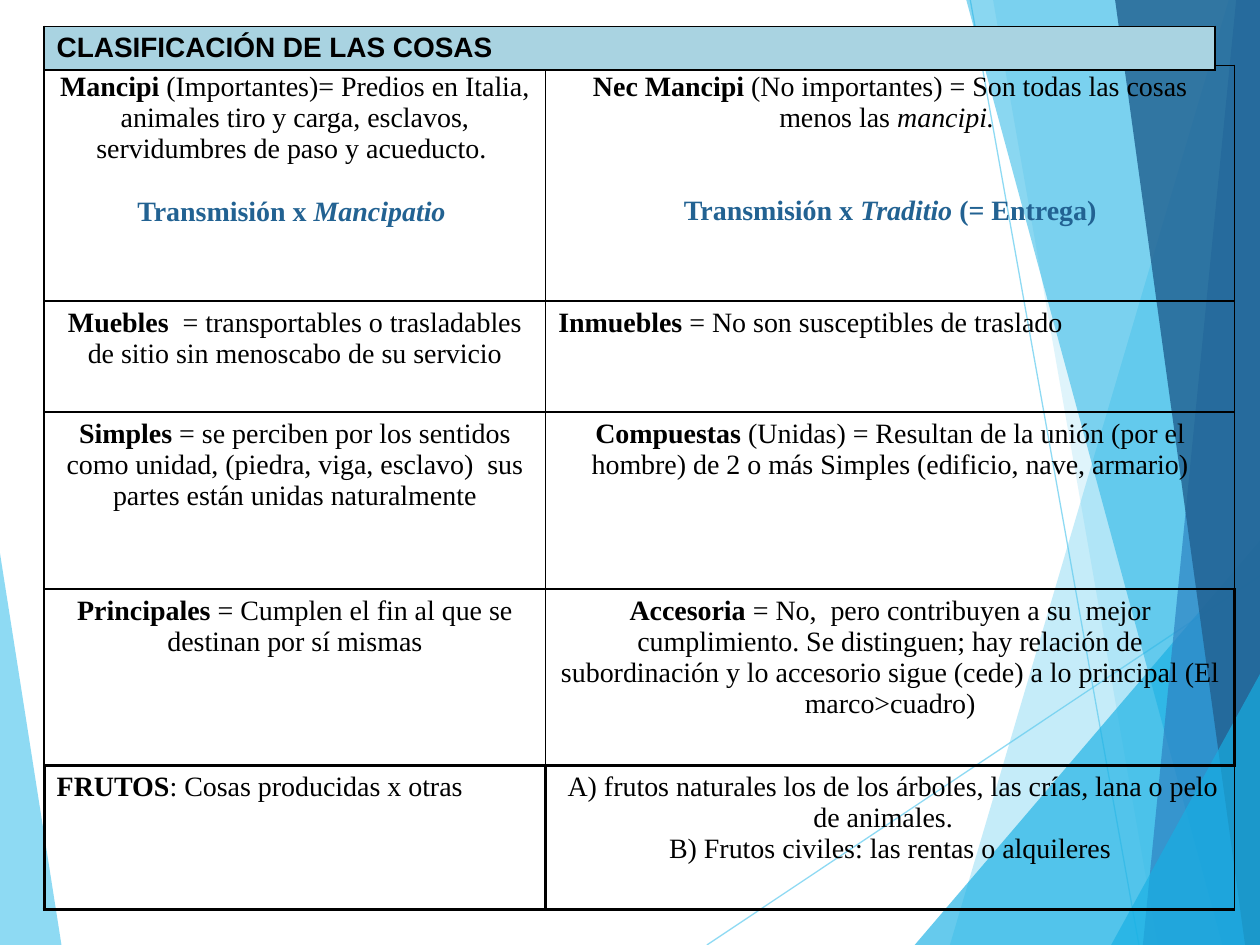
from dataclasses import dataclass

import lxml.etree
import pptx
import pptx.dml.color
import pptx.enum.shapes
import pptx.enum.text
import pptx.oxml.ns
import pptx.util

Cm = pptx.util.Cm
Pt = pptx.util.Pt
qn = pptx.oxml.ns.qn
Align = pptx.enum.text.PP_ALIGN

WIDE, HIGH = 25.4, 19.05
SKY, CYAN, BLUE, NAVY = "5FCBEF", "17B0E4", "2E83C3", "226292"
BLACK, PALE = "000000", "A9D3E1"
SERIF, SANS = "Times New Roman", "Arial"


@dataclass
class Wedge:
    top: tuple[float, float]
    foot: float
    side: float
    color: str
    alpha: int


@dataclass
class Line:
    start: tuple[float, float]
    end: tuple[float, float]


@dataclass
class Run:
    text: str
    bold: bool = False
    slant: bool = False


@dataclass
class Para:
    runs: list[Run]
    left: bool = False
    color: str = BLACK
    gap: float = 0
    face: str = SERIF


@dataclass
class Box:
    paras: list[Para]
    edges: tuple[int, int, int, int] = (1, 1, 1, 1)
    fill: str = ""


@dataclass
class Grid:
    left: float
    top: float
    cols: list[float]
    rows: list[float]
    boxes: list[list[Box]]


def term(name: str, rest: str, left: bool = False) -> Para:
    return Para([Run(name, True), Run(rest)], left)


def mode(word: str, tail: str, gap: float) -> Para:
    runs = [Run("Transmisión x ", True), Run(word, True, True)]
    if tail:
        runs.append(Run(tail, True))
    return Para(runs, color=NAVY, gap=gap)


WEDGES = [
    Wedge((0, 11.15), 1.24, 0, SKY, 70),
    Wedge((24.77, 0), 19.15, WIDE, SKY, 36),
    Wedge((20.02, 0), 23.34, WIDE, SKY, 20),
    Wedge((WIDE, 10.9), 18.44, WIDE, CYAN, 66),
    Wedge((19.48, 0), 24.64, WIDE, CYAN, 50),
    Wedge((24.92, 0), 23.04, WIDE, BLUE, 70),
    Wedge((22.48, 0), 25.1, WIDE, NAVY, 82),
    Wedge((WIDE, 13.59), 22.4, WIDE, CYAN, 66),
]
LINES = [Line((14.25, HIGH), (WIDE, 11.61)), Line((19.56, 0), (22.96, HIGH))]

NEC = term("Nec Mancipi", " (No importantes) = Son todas las cosas menos las ")
NEC.runs.append(Run("mancipi. ", slant=True))

THINGS = Grid(0.89, 1.32, [10.11, 13.89], [4.75, 2.24, 3.56, 3.56, 2.9], [
    [
        Box([term("Mancipi", " (Importantes)= Predios en Italia, animales tiro y carga, "
                  "esclavos, servidumbres de paso y acueducto. "),
             mode("Mancipatio ", "", 17.7)]),
        Box([NEC, mode("Traditio", " (= Entrega)", 35.4)]),
    ],
    [
        Box([term("Muebles", "  = transportables o trasladables de sitio sin "
                  "menoscabo de su servicio")]),
        Box([term("Inmuebles", " = No son susceptibles de traslado", True)]),
    ],
    [
        Box([term("Simples", " = se perciben por los sentidos como unidad, "
                  "(piedra, viga, esclavo)  sus partes están unidas naturalmente")]),
        Box([term("Compuestas", " (Unidas) = Resultan de la unión (por el hombre) "
                  "de 2 o más Simples (edificio, nave, armario)")]),
    ],
    [
        Box([term("Principales", " = Cumplen el fin al que se destinan por sí mismas")],
            (1, 1, 1, 2)),
        Box([term("Accesoria", " = No,  pero contribuyen a su  mejor cumplimiento. "
                  "Se distinguen; hay relación de subordinación y lo accesorio sigue "
                  "(cede) a lo principal (El marco>cuadro)")], (1, 2, 1, 2)),
    ],
    [
        Box([term("FRUTOS", ": Cosas producidas x otras", True)], (2, 2, 2, 2)),
        Box([Para([Run(" A) frutos naturales los de los árboles, las crías, "
                       "lana o pelo de animales.  ")]),
             Para([Run("B) Frutos civiles: las rentas o alquileres")])], (2, 1, 2, 2)),
    ],
])
TITLE = Grid(0.89, 0.53, [23.6], [0.79], [
    [Box([Para([Run("CLASIFICACIÓN DE LAS COSAS", True)], True, face=SANS)], fill=PALE)],
])


def paint(fill, color: str, alpha: int = 100) -> None:
    fill.solid()
    fill.fore_color.rgb = pptx.dml.color.RGBColor.from_string(color)
    if alpha < 100:
        tint = fill._xPr.find(qn("a:solidFill"))[0]
        lxml.etree.SubElement(tint, qn("a:alpha"), val=str(alpha * 1000))


def draw_wedge(slide, wedge: Wedge) -> None:
    pen = slide.shapes.build_freeform(Cm(wedge.top[0]), Cm(wedge.top[1]))
    ends = [(wedge.foot, HIGH), (wedge.side, HIGH), (wedge.side, wedge.top[1])]
    pen.add_line_segments([(Cm(x), Cm(y)) for x, y in ends])
    shape = pen.convert_to_shape()
    shape.shadow.inherit = False
    shape.line.fill.background()
    paint(shape.fill, wedge.color, wedge.alpha)


def draw_line(slide, line: Line) -> None:
    kind = pptx.enum.shapes.MSO_CONNECTOR.STRAIGHT
    ends = [Cm(v) for v in line.start + line.end]
    link = slide.shapes.add_connector(kind, *ends)
    link.line.width = Pt(0.75)
    paint(link.line.fill, SKY, 70)
    lxml.etree.SubElement(link._element.spPr, qn("a:effectLst"))


def write(part, para: Para) -> None:
    part.alignment = Align.LEFT if para.left else Align.CENTER
    part.space_before = Pt(para.gap)
    part.font.name = para.face
    part.font.size = Pt(16)
    paint(part.font.fill, para.color)
    for item in para.runs:
        run = part.add_run()
        run.text = item.text
        run.font.bold = item.bold
        run.font.italic = item.slant


def fill_cell(cell, box: Box) -> None:
    props = cell._tc.get_or_add_tcPr()
    for side, width in zip("LRTB", box.edges):
        edge = lxml.etree.SubElement(props, qn(f"a:ln{side}"), w=str(Pt(width)))
        solid = lxml.etree.SubElement(edge, qn("a:solidFill"))
        lxml.etree.SubElement(solid, qn("a:srgbClr"), val=BLACK)
    if box.fill:
        paint(cell.fill, box.fill)
    else:
        cell.fill.background()
    frame = cell.text_frame
    for i, para in enumerate(box.paras):
        write(frame.add_paragraph() if i else frame.paragraphs[0], para)


def draw_grid(slide, grid: Grid) -> None:
    size = [Cm(sum(grid.cols)), Cm(sum(grid.rows))]
    table = slide.shapes.add_table(
        len(grid.rows), len(grid.cols), Cm(grid.left), Cm(grid.top), *size).table
    table.first_row = table.horz_banding = False
    for col, width in zip(table.columns, grid.cols):
        col.width = Cm(width)
    for row, height, boxes in zip(table.rows, grid.rows, grid.boxes):
        row.height = Cm(height)
        for cell, box in zip(row.cells, boxes):
            fill_cell(cell, box)


def main() -> None:
    deck = pptx.Presentation()
    deck.slide_width, deck.slide_height = Cm(WIDE), Cm(HIGH)
    slide = deck.slides.add_slide(deck.slide_layouts[6])
    draw_wedge(slide, WEDGES[0])
    for line in LINES:
        draw_line(slide, line)
    for wedge in WEDGES[1:]:
        draw_wedge(slide, wedge)
    for grid in (THINGS, TITLE):
        draw_grid(slide, grid)
    deck.save("out.pptx")


if __name__ == "__main__":
    main()
